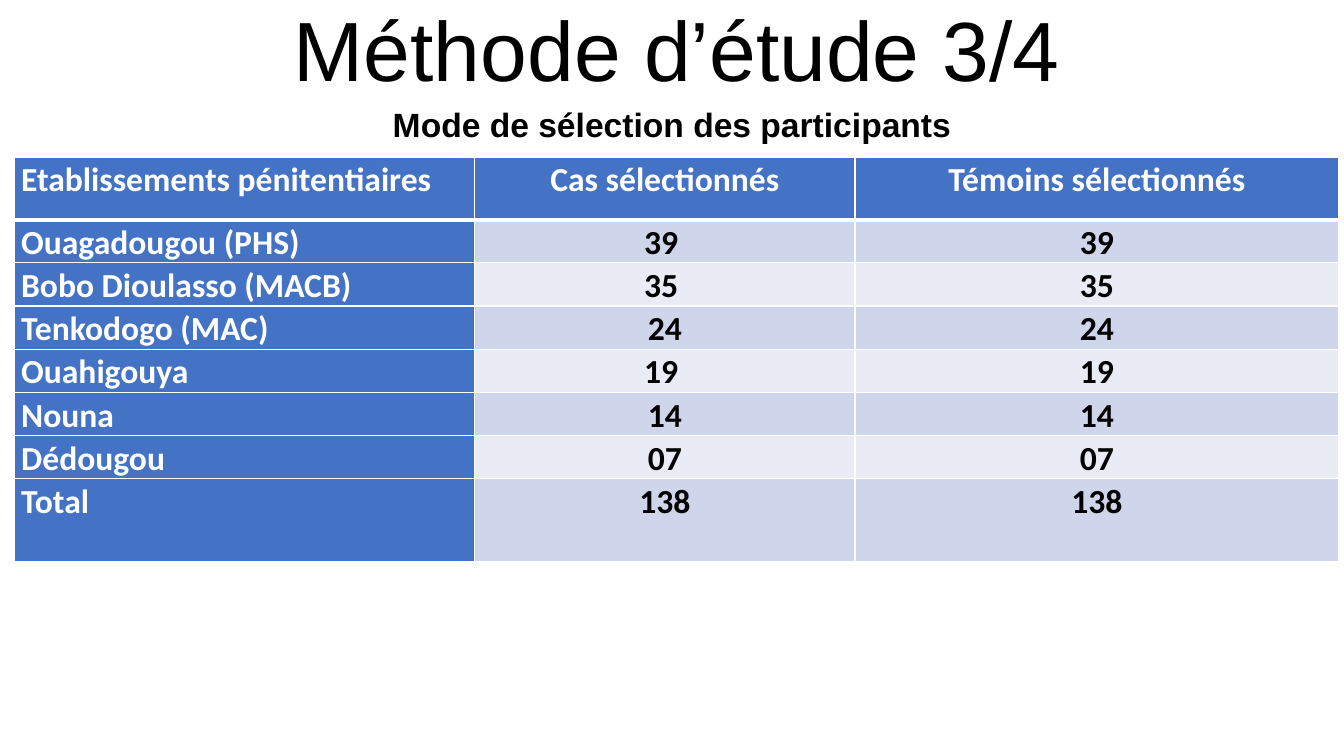
import pptx
import pptx.dml.color
import pptx.enum.text
import pptx.oxml
import pptx.oxml.ns
import pptx.util

Inches, Pt = pptx.util.Inches, pptx.util.Pt
RGBColor = pptx.dml.color.RGBColor
ALIGN = pptx.enum.text.PP_ALIGN
ANCHOR = pptx.enum.text.MSO_ANCHOR

BLACK = RGBColor(0x00, 0x00, 0x00)
WHITE = RGBColor(0xFF, 0xFF, 0xFF)
BLUE = RGBColor(0x44, 0x72, 0xC4)
BAND_DARK = RGBColor(0xCF, 0xD5, 0xEA)
BAND_LIGHT = RGBColor(0xE9, 0xEB, 0xF5)

SLIDE_W, SLIDE_H = 13.33, 7.5

# Format values: font attributes and paragraph attributes
TITLE_FONT = {"name": "Arial", "size": Pt(60), "bold": False}
SUBTITLE_FONT = {"name": "Arial", "size": Pt(24), "bold": True}
CELL_FONT = {"name": "Calibri", "size": Pt(24), "bold": True}
TITLE_PARA = {"alignment": ALIGN.CENTER, "line_spacing": 0.9}
SUBTITLE_PARA = {**TITLE_PARA, "space_before": Pt(10)}
CELL_PARA = {"line_spacing": 1.07, "space_after": Pt(8)}
CELL_MARGINS = {"margin_left": Inches(0.07), "margin_right": Inches(0.07),
                "margin_top": 0, "margin_bottom": 0}

COLUMNS = [4.57, 3.77, 4.8]
HEADER_H, ROW_H, TOTAL_H = 0.62, 0.38, 0.82
ROWS = [
    ("Etablissements pénitentiaires", "Cas sélectionnés", "Témoins sélectionnés"),
    ("Ouagadougou (PHS)", "39 ", "39"),
    ("Bobo Dioulasso (MACB)", "35 ", "35"),
    ("Tenkodogo (MAC)", "24", "24"),
    ("Ouahigouya", "19 ", "19"),
    ("Nouna", "14", "14"),
    ("Dédougou", "07", "07"),
    ("Total", "138", "138"),
]


def apply(obj, values):
    for name, value in values.items():
        setattr(obj, name, value)


def write(tf, text, font, para, color):
    p = tf.paragraphs[0]
    apply(p, para)
    r = p.add_run()
    r.text = text
    apply(r.font, font)
    r.font.color.rgb = color


def add_heading(slide, text, box, font, para, anchor):
    """Place a text box; box holds shares of the slide's size."""
    x, y, w, h = box
    sp = slide.shapes.add_textbox(
        Inches(x * SLIDE_W), Inches(y * SLIDE_H),
        Inches(w * SLIDE_W), Inches(h * SLIDE_H))
    apply(sp.text_frame, {"word_wrap": True, "vertical_anchor": anchor})
    write(sp.text_frame, text, font, para, BLACK)


def set_borders(cell, widths):
    """Draw white cell borders; widths are points by side."""
    tcPr = cell._tc.get_or_add_tcPr()
    for i, (side, width) in enumerate(widths.items()):
        tcPr.insert(i, pptx.oxml.parse_xml(
            f'<a:ln{side} {pptx.oxml.ns.nsdecls("a")} w="{Pt(width)}">'
            f'<a:solidFill><a:srgbClr val="{WHITE}"/></a:solidFill></a:ln{side}>'))


def fill_cell(cell, text, row, col):
    label = row == 0 or col == 0
    band = BAND_DARK if row % 2 else BAND_LIGHT
    cell.fill.solid()
    cell.fill.fore_color.rgb = BLUE if label else band
    apply(cell, CELL_MARGINS)
    align = ALIGN.CENTER if col else ALIGN.JUSTIFY
    write(cell.text_frame, text, CELL_FONT, {**CELL_PARA, "alignment": align},
          WHITE if label else BLACK)
    set_borders(cell, {"L": 1, "R": 1, "T": 3 if row == 1 else 1,
                       "B": 3 if row == 0 else 1})


def add_selection_table(slide, x, y):
    heights = [HEADER_H] + [ROW_H] * (len(ROWS) - 2) + [TOTAL_H]
    table = slide.shapes.add_table(
        len(ROWS), len(COLUMNS), Inches(x * SLIDE_W), Inches(y * SLIDE_H),
        Inches(sum(COLUMNS)), Inches(sum(heights))).table
    table.first_col = True
    for column, width in zip(table.columns, COLUMNS):
        column.width = Inches(width)
    for i, (texts, height) in enumerate(zip(ROWS, heights)):
        table.rows[i].height = Inches(height)
        for j, text in enumerate(texts):
            fill_cell(table.cell(i, j), text, i, j)


def main():
    prs = pptx.Presentation()
    prs.slide_width, prs.slide_height = Inches(SLIDE_W), Inches(SLIDE_H)
    slide = prs.slides.add_slide(prs.slide_layouts[6])

    # Title and subtitle
    add_heading(slide, "Méthode d’étude 3/4", (0.0075, -0.0133, 0.9925, 0.152),
                TITLE_FONT, TITLE_PARA, ANCHOR.BOTTOM)
    add_heading(slide, "Mode de sélection des participants",
                (0.0075, 0.1373, 0.985, 0.072),
                SUBTITLE_FONT, SUBTITLE_PARA, ANCHOR.TOP)

    # Cases and controls by prison
    add_selection_table(slide, 0.0105, 0.208)

    prs.save("out.pptx")


if __name__ == "__main__":
    main()
